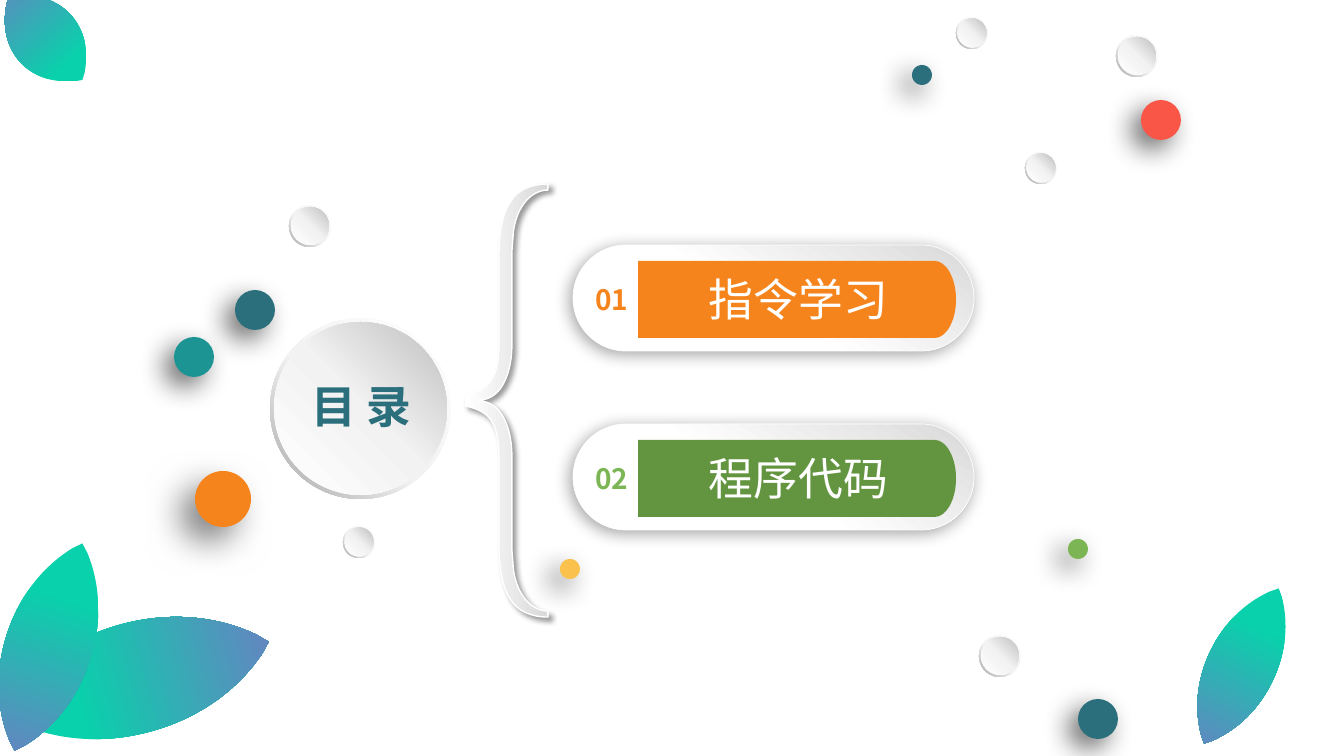
import pptx
import pptx.dml.color
import pptx.enum.shapes
import pptx.enum.text
import pptx.oxml.ns
import pptx.util
from lxml import etree

PX = 914400 / 100.8
FONT = "Noto Sans CJK SC"
SHAPES = pptx.enum.shapes.MSO_SHAPE
qn = pptx.oxml.ns.qn

TITLE = "目 录"
# number, heading, number colour, band colour
CHAPTERS = [
    ("01", "指令学习", "F5841C", "F5841C"),
    ("02", "程序代码", "7CB554", "639541"),
]
PILL_TOP, PILL_STEP = 245, 179

RIM_STOPS = [(0, "FFFFFF"), (55, "F2F2F2"), (100, "A6A6A6")]
FACE_STOPS = [(0, "FFFFFF"), (51, "F2F2F2"), (100, "BFBFBF")]
PILL_STOPS = [(45, "FFFFFF"), (100, "D9D9D9")]
BRACE_STOPS = [(0, "FFFFFF"), (100, "D9D9D9")]
LEAF_STOPS = [(0, "09D1AB"), (31, "09D1AB"), (100, "6E7DC3")]

# opacity in percent, blur and distance in points, direction in degrees
DOT_SHADOW = (60, 20, 10, 135)
LARGE_DOT_SHADOW = (50, 25, 15, 135)
PILL_SHADOW = (34, 12, 3, 135)
BRACE_SHADOW = (40, 4, 3, 45)

# left, top, width, height, rotation
LEAVES = [
    (80, 540, 111, 276, 254.8),
    (5, 538, 87, 218, 18.1),
    (1207, 580, 69, 172, 25.7),
    (11, -17, 69, 111, 138.3),
]
# left, top, diameter, rim width
MAIN_PEARL = (270, 318, 181, 8)
PEARLS = [
    (956, 17, 32, 3), (1116, 35, 42, 4), (343, 526, 32, 3),
    (1025, 152, 32, 3), (979, 635, 42, 4), (289, 205, 42, 4),
]
# left, top, diameter, colour, shadow
DOTS = [
    (1141, 100, 40, "F95647", DOT_SHADOW),
    (912, 65, 20, "2B6F7D", DOT_SHADOW),
    (235, 290, 40, "2B6F7D", DOT_SHADOW),
    (560, 559, 20, "FAC14D", DOT_SHADOW),
    (195, 471, 56, "F5841C", LARGE_DOT_SHADOW),
    (1078, 699, 40, "2B6F7D", DOT_SHADOW),
    (174, 337, 40, "1C9494", DOT_SHADOW),
    (1068, 539, 20, "7CB554", DOT_SHADOW),
]

# Outlines: one point is a line, three points are a cubic curve.
BRACE_UPPER_HALF = [
    [(466, 395)],
    [(479, 392), (488, 387), (492, 379)],
    [(497, 372), (499, 359), (499, 341)],
    [(499, 259)],
    [(499, 231), (503, 212), (511, 201)],
    [(518, 190), (531, 184), (548, 184)],
    [(548, 190)],
    [(529, 190), (514, 211), (513, 238)],
    [(512, 251)],
    [(512, 345)],
    [(512, 370), (503, 400), (479, 400)],
]
# Quarter of a leaf, in halves of its width and height
LEAF_QUARTER = [[(0, -1)], [(0.18, -0.93)], [(0.69, -0.69), (1, -0.37), (1, 0)]]
# Upper half of a band, measured from the middle of its left edge
BAND_UPPER_HALF = [[(0, -38)], [(297, -38)], [(308, -38), (318, -21), (318, 0)]]


def px(length):
    return pptx.util.Emu(round(length * PX))


def colour(value):
    return pptx.dml.color.RGBColor.from_string(value)


def transform(outline, change):
    return [[change(x, y) for x, y in segment] for segment in outline]


def mirrored(outline, reflect):
    """Continue an outline with its own reflection, drawn backwards."""
    backwards = [[outline[-1][-1]]]
    for index in range(len(outline) - 1, 0, -1):
        controls = outline[index][:-1]
        backwards.append(controls[::-1] + [outline[index - 1][-1]])
    reflection = transform(backwards, reflect)
    if reflection[0][0] == outline[-1][-1]:
        reflection = reflection[1:]
    return outline + reflection


def paint(shape, fill, angle=0, line=None, shadow=None):
    """Fill with a hex colour or gradient stops; line is (colour, points)."""
    if isinstance(fill, str):
        shape.fill.solid()
        shape.fill.fore_color.rgb = colour(fill)
    else:
        shape.fill.gradient()
        shape.fill.gradient_angle = (360 - angle) % 360
        stops = shape._element.spPr.find(qn("a:gradFill")).find(qn("a:gsLst"))
        for stop in list(stops):
            stops.remove(stop)
        for position, value in fill:
            stop = etree.SubElement(stops, qn("a:gs"), pos=str(position * 1000))
            etree.SubElement(stop, qn("a:srgbClr"), val=value)
    if line:
        shape.line.color.rgb = colour(line[0])
        shape.line.width = pptx.util.Pt(line[1])
    else:
        shape.line.fill.background()
    shape.shadow.inherit = False
    if shadow:
        opacity, blur, distance, direction = shadow
        effects = shape._element.spPr.find(qn("a:effectLst"))
        outer = etree.SubElement(
            effects, qn("a:outerShdw"), blurRad=str(blur * 12700),
            dist=str(distance * 12700), dir=str(direction * 60000),
            algn="ctr", rotWithShape="0")
        black = etree.SubElement(outer, qn("a:srgbClr"), val="000000")
        etree.SubElement(black, qn("a:alpha"), val=str(opacity * 1000))


def add_preset(slide, kind, left, top, width, height):
    return slide.shapes.add_shape(kind, px(left), px(top), px(width), px(height))


def add_outline(slide, outline):
    """Draw all points as lines, then join each group of three into a curve."""
    (start_x, start_y), *others = [(px(x), px(y)) for segment in outline for x, y in segment]
    builder = slide.shapes.build_freeform(start_x, start_y)
    builder.add_line_segments(others, close=True)
    shape = builder.convert_to_shape()
    lines = iter(list(shape._element.iter(qn("a:lnTo"))))
    for segment in outline[1:]:
        steps = [next(lines) for _ in segment]
        if len(steps) == 3:
            curve = etree.Element(qn("a:cubicBezTo"))
            steps[0].addprevious(curve)
            for step in steps:
                curve.append(step[0])
                step.getparent().remove(step)
    return shape


def add_pearl(slide, left, top, size, rim):
    ring = add_preset(slide, SHAPES.DONUT, left, top, size, size)
    ring.adjustments[0] = 0.05
    paint(ring, RIM_STOPS, 135)
    face = add_preset(slide, SHAPES.OVAL, left + rim / 2, top + rim / 2, size - rim, size - rim)
    paint(face, FACE_STOPS, 315)


def add_leaf(slide, left, top, width, height, rotation):
    right_side = mirrored(LEAF_QUARTER, lambda x, y: (x, -y))
    lens = mirrored(right_side, lambda x, y: (-x, y))
    leaf = add_outline(slide, transform(
        lens, lambda x, y: (left + width * (1 + x) / 2, top + height * (1 + y) / 2)))
    leaf.rotation = rotation
    paint(leaf, LEAF_STOPS, 90)


def write(shape, text, size, value, bold, wrap=True):
    frame = shape.text_frame
    frame.text = text
    frame.word_wrap = wrap
    frame.vertical_anchor = pptx.enum.text.MSO_ANCHOR.MIDDLE
    frame.margin_left = frame.margin_right = frame.margin_top = frame.margin_bottom = 0
    paragraph = frame.paragraphs[0]
    paragraph.alignment = pptx.enum.text.PP_ALIGN.CENTER
    font = paragraph.runs[0].font
    font.size, font.bold, font.name = pptx.util.Pt(size), bold, FONT
    font.color.rgb = colour(value)
    etree.SubElement(font._element, qn("a:ea"), typeface=FONT)


def add_chapter(slide, top, number, heading, number_colour, band_colour):
    pill = add_preset(slide, SHAPES.ROUNDED_RECTANGLE, 573, top, 401, 106)
    pill.adjustments[0] = 0.5
    paint(pill, PILL_STOPS, 300, ("FFFFFF", 0.5), PILL_SHADOW)
    middle = top + 54
    band = mirrored(BAND_UPPER_HALF, lambda x, y: (x, 1 - y))
    paint(add_outline(slide, transform(band, lambda x, y: (638 + x, middle + y))), band_colour)
    number_box = slide.shapes.add_textbox(px(585), px(middle - 22), px(54), px(44))
    write(number_box, number, 20, number_colour, True, wrap=False)
    heading_box = slide.shapes.add_textbox(px(687), px(middle - 33), px(223), px(65))
    write(heading_box, heading, 32, "FFFFFF", False)


def main():
    presentation = pptx.Presentation()
    presentation.slide_width, presentation.slide_height = px(1344), px(756)
    slide = presentation.slides.add_slide(presentation.slide_layouts[5])

    add_pearl(slide, *MAIN_PEARL)
    title = slide.shapes.title
    title.left, title.top, title.width, title.height = px(282), px(379), px(158), px(54)
    write(title, TITLE, 32, "2B6F7D", True)
    slide.shapes._spTree.append(title._element)

    brace = add_outline(slide, mirrored(BRACE_UPPER_HALF, lambda x, y: (x, 801 - y)))
    paint(brace, BRACE_STOPS, 0, ("FFFFFF", 1), BRACE_SHADOW)
    for index, chapter in enumerate(CHAPTERS):
        add_chapter(slide, PILL_TOP + index * PILL_STEP, *chapter)
    for leaf in LEAVES:
        add_leaf(slide, *leaf)
    for pearl in PEARLS:
        add_pearl(slide, *pearl)
    for left, top, size, value, shadow in DOTS:
        paint(add_preset(slide, SHAPES.OVAL, left, top, size, size), value, shadow=shadow)
    presentation.save("out.pptx")


if __name__ == "__main__":
    main()
